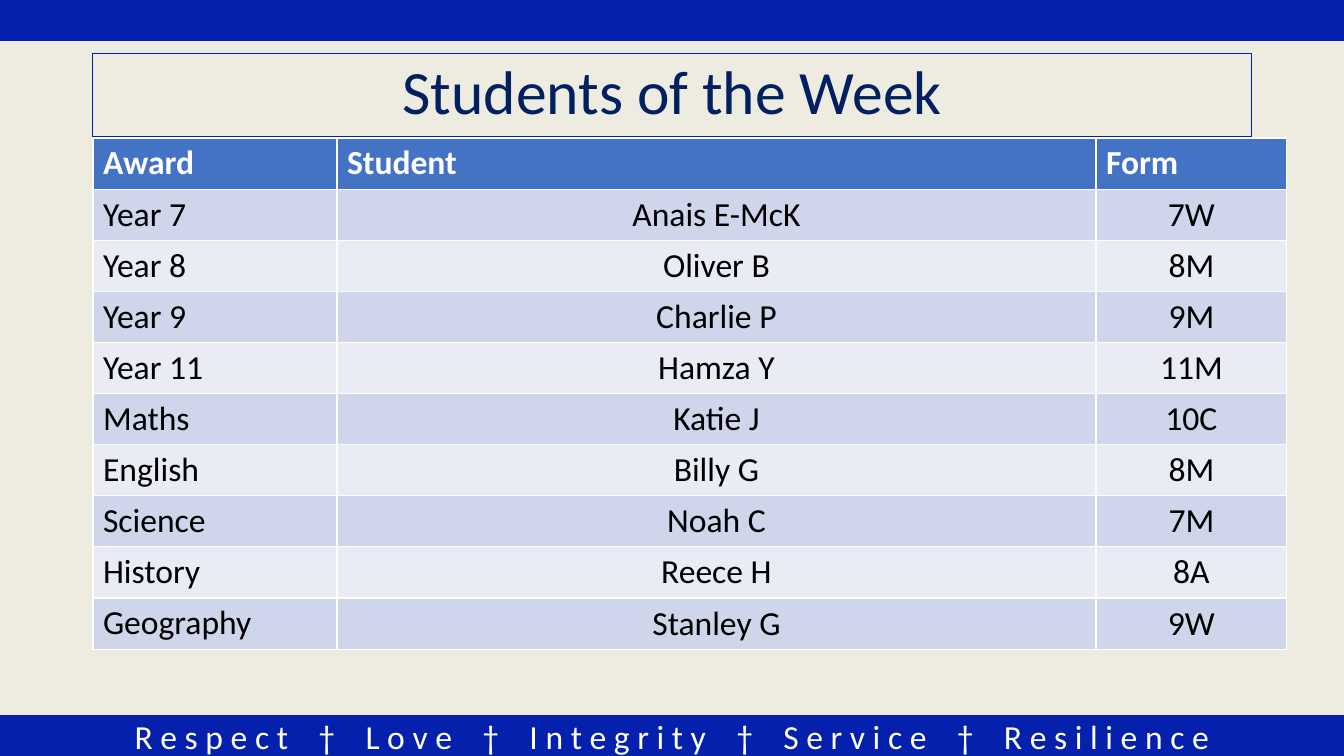
from pptx import Presentation
from pptx.dml.color import RGBColor
from pptx.enum.shapes import MSO_SHAPE
from pptx.enum.text import MSO_ANCHOR, MSO_AUTO_SIZE, PP_ALIGN
from pptx.util import Pt

PX = 914400 / 100.8
LEFT, CENTER = PP_ALIGN.LEFT, PP_ALIGN.CENTER
TOP, MIDDLE, BOTTOM = MSO_ANCHOR.TOP, MSO_ANCHOR.MIDDLE, MSO_ANCHOR.BOTTOM
RECTANGLE = MSO_SHAPE.RECTANGLE
NO_AUTOFIT = MSO_AUTO_SIZE.NONE

PAGE_WIDTH, PAGE_HEIGHT, BAR_HEIGHT = 1344, 756, 40
BLUE, WHITE = "0420AC", "FFFFFF"
VALUES = ["Respect", "Love", "Integrity", "Service", "Resilience"]
AWARDS = [
    ("Award", "Student", "Form"),
    ("Year 7", "Anais E-McK", "7W"),
    ("Year 8", "Oliver B", "8M"),
    ("Year 9", "Charlie P", "9M"),
    ("Year 11", "Hamza Y", "11M"),
    ("Maths", "Katie J", "10C"),
    ("English", "Billy G", "8M"),
    ("Science", "Noah C", "7M"),
    ("History", "Reece H", "8A"),
    ("Geography", "Stanley G", "9W"),
]
COLUMN_WIDTHS = [244, 759, 191]
ROW_HEIGHT = 51


def px(*lengths):
    """Turn pixel lengths into a list of EMU."""
    return [round(length * PX) for length in lengths]


def write(frame, text, size=24, color="000000", bold=False, align=LEFT):
    para = frame.paragraphs[0]
    para.alignment = align
    span = para.add_run()
    span.text = text
    span.font.name = "Calibri"
    span.font.size = Pt(size)
    span.font.bold = bold
    span.font.color.rgb = RGBColor.from_string(color)


deck = Presentation()
deck.slide_width, deck.slide_height = px(PAGE_WIDTH, PAGE_HEIGHT)
page = deck.slides.add_slide(deck.slide_layouts[5])
page.background.fill.solid()
page.background.fill.fore_color.rgb = RGBColor.from_string("EEECE1")

# Bars along the top and bottom edges
motto = "    †    ".join(" ".join(value) for value in VALUES)
for bar_top, bar_text in [(PAGE_HEIGHT - BAR_HEIGHT, motto), (0, "")]:
    bar = page.shapes.add_shape(RECTANGLE, *px(0, bar_top, PAGE_WIDTH, BAR_HEIGHT))
    bar.shadow.inherit = False
    bar.fill.solid()
    bar.fill.fore_color.rgb = RGBColor.from_string(BLUE)
    bar.line.color.rgb = RGBColor.from_string(BLUE)
    bar.line.width = Pt(1)
    if bar_text:
        bar.text_frame.vertical_anchor = MIDDLE
        write(bar.text_frame, bar_text, color=WHITE, align=CENTER)

# Title
title = page.shapes.title
title.left, title.top, title.width, title.height = px(93, 53, 1159, 84)
title.line.color.rgb = RGBColor.from_string(BLUE)
title.line.width = Pt(0.75)
title.text_frame.auto_size = NO_AUTOFIT
title.text_frame.vertical_anchor = MIDDLE
title.text_frame.paragraphs[0].line_spacing = 0.9
write(title.text_frame, "Students of the Week", size=44, color="002060", align=CENTER)

# Awards table
table = page.shapes.add_table(
    len(AWARDS), len(COLUMN_WIDTHS),
    *px(93, 138, sum(COLUMN_WIDTHS), ROW_HEIGHT * len(AWARDS)),
).table
for column, width in zip(table.columns, px(*COLUMN_WIDTHS)):
    column.width = width
for row_number, award in enumerate(AWARDS):
    header = row_number == 0
    fill = "4472C4" if header else ("E9EBF5", "CFD5EA")[row_number % 2]
    for column_number, text in enumerate(award):
        cell = table.cell(row_number, column_number)
        cell.fill.solid()
        cell.fill.fore_color.rgb = RGBColor.from_string(fill)
        centered = not header and column_number > 0
        cell.vertical_anchor = BOTTOM if centered else TOP
        if centered:
            cell.margin_left, cell.margin_right, cell.margin_top = px(1, 1, 1)
        write(cell.text_frame, text, color=WHITE if header else "000000",
              bold=header, align=CENTER if centered else LEFT)

deck.save("out.pptx")
